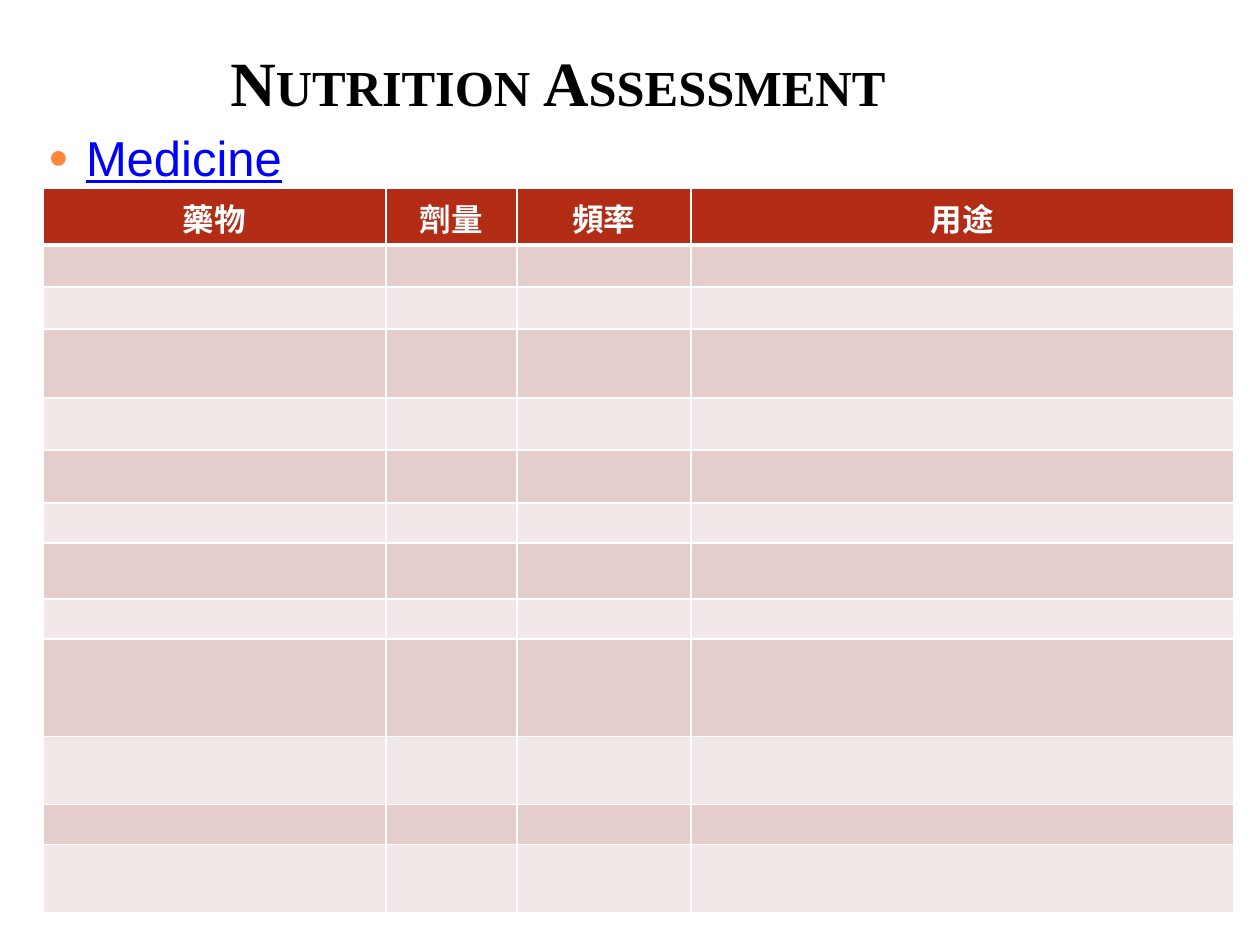
from dataclasses import dataclass

from lxml.etree import SubElement
from pptx import Presentation
from pptx.dml.color import RGBColor
from pptx.enum.text import MSO_ANCHOR as Anchor, MSO_AUTO_SIZE as AutoSize, PP_ALIGN as Align
from pptx.oxml.ns import qn
from pptx.util import Emu, Pt

EMU_PER_PX = 914400 / 126


@dataclass(frozen=True)
class Theme:
    title_font: str = "Times New Roman"
    body_font: str = "Arial"
    black: str = "000000"
    white: str = "FFFFFF"
    link: str = "0000FF"
    bullet: str = "FE8637"
    header: str = "B32C16"
    bands: tuple = ("E5CDCC", "F2E8E8")
    title_size: int = 36
    body_size: int = 28
    header_size: int = 18
    empty_size: int = 10


@dataclass(frozen=True)
class Column:
    heading: str
    width: int


@dataclass(frozen=True)
class Area:
    left: int
    top: int
    width: int
    height: int


THEME = Theme()
COLUMNS = (Column("藥物", 343), Column("劑量", 131), Column("頻率", 174), Column("用途", 543))
HEADER_HEIGHT = 57
ROW_HEIGHTS = (42, 42, 69, 52, 53, 40, 56, 40, 98, 68, 40, 68)


def px(length: int) -> Emu:
    return Emu(round(length * EMU_PER_PX))


def apply(target, **values) -> None:
    for name, value in values.items():
        setattr(target, name, value)


def place(shape, area: Area) -> None:
    apply(shape, left=px(area.left), top=px(area.top),
          width=px(area.width), height=px(area.height))


def style_font(font, name: str, size: int, color: str, **extra) -> None:
    apply(font, name=name, size=Pt(size), **extra)
    font.color.rgb = RGBColor.from_string(color)


def add_title(slide, text: str) -> None:
    title = slide.shapes.title
    place(title, Area(63, -4, 1029, 158))
    frame = title.text_frame
    apply(frame, auto_size=AutoSize.NONE, word_wrap=True, vertical_anchor=Anchor.MIDDLE,
          margin_top=px(18), margin_bottom=px(6), margin_left=px(13), margin_right=px(52))
    para = frame.paragraphs[0]
    para.alignment = Align.CENTER
    span = para.add_run()
    span.text = text
    style_font(span.font, THEME.title_font, THEME.title_size, THEME.black, bold=True)
    span.font._element.set("cap", "small")


def add_bullet(slide, text: str, area: Area) -> None:
    box = slide.shapes.add_textbox(0, 0, 0, 0)
    place(box, area)
    frame = box.text_frame
    apply(frame, word_wrap=True, margin_left=px(13), margin_top=px(11))
    para = frame.paragraphs[0]
    span = para.add_run()
    span.text = text
    style_font(span.font, THEME.body_font, THEME.body_size, THEME.link, underline=True)
    # Hanging round bullet
    props = para._p.get_or_add_pPr()
    props.set("marL", str(px(38)))
    props.set("indent", str(-px(38)))
    color = SubElement(props, qn("a:buClr"))
    SubElement(color, qn("a:srgbClr"), val=THEME.bullet)
    SubElement(props, qn("a:buSzPct"), val="70000")
    SubElement(props, qn("a:buFont"), typeface=THEME.body_font)
    SubElement(props, qn("a:buChar"), char="●")


def style_cell(cell, fill: str, top: int = 1, bottom: int = 1) -> None:
    apply(cell, vertical_anchor=Anchor.MIDDLE, margin_top=px(3), margin_bottom=px(1))
    props = cell._tc.get_or_add_tcPr()
    # Borders come before the fill in the cell properties
    for tag, points in (("a:lnL", 1), ("a:lnR", 1), ("a:lnT", top), ("a:lnB", bottom)):
        line = SubElement(props, qn(tag), w=str(Pt(points)))
        solid = SubElement(line, qn("a:solidFill"))
        SubElement(solid, qn("a:srgbClr"), val=THEME.white)
    cell.fill.solid()
    cell.fill.fore_color.rgb = RGBColor.from_string(fill)


def add_medicine_table(slide, left: int, top: int) -> None:
    heights = (HEADER_HEIGHT, *ROW_HEIGHTS)
    width = sum(column.width for column in COLUMNS)
    table = slide.shapes.add_table(len(heights), len(COLUMNS), px(left), px(top),
                                   px(width), px(sum(heights))).table
    for row, height in zip(table.rows, heights):
        row.height = px(height)
    # Header row
    for index, column in enumerate(COLUMNS):
        table.columns[index].width = px(column.width)
        cell = table.cell(0, index)
        style_cell(cell, THEME.header, bottom=3)
        para = cell.text_frame.paragraphs[0]
        para.alignment = Align.CENTER
        span = para.add_run()
        span.text = column.heading
        style_font(span.font, THEME.title_font, THEME.header_size, THEME.white, bold=True)
    # Banded empty rows
    for number in range(1, len(heights)):
        for cell in table.rows[number].cells:
            style_cell(cell, THEME.bands[(number - 1) % 2], top=3 if number == 1 else 1)
            cell.text_frame.paragraphs[0].font.size = Pt(THEME.empty_size)


def main() -> None:
    deck = Presentation()
    apply(deck, slide_width=px(1260), slide_height=px(945))
    slide = deck.slides.add_slide(deck.slide_layouts[5])
    add_title(slide, "Nutrition Assessment")
    add_bullet(slide, "Medicine", Area(35, 116, 1079, 585))
    add_medicine_table(slide, 43, 188)
    deck.save("out.pptx")


if __name__ == "__main__":
    main()
